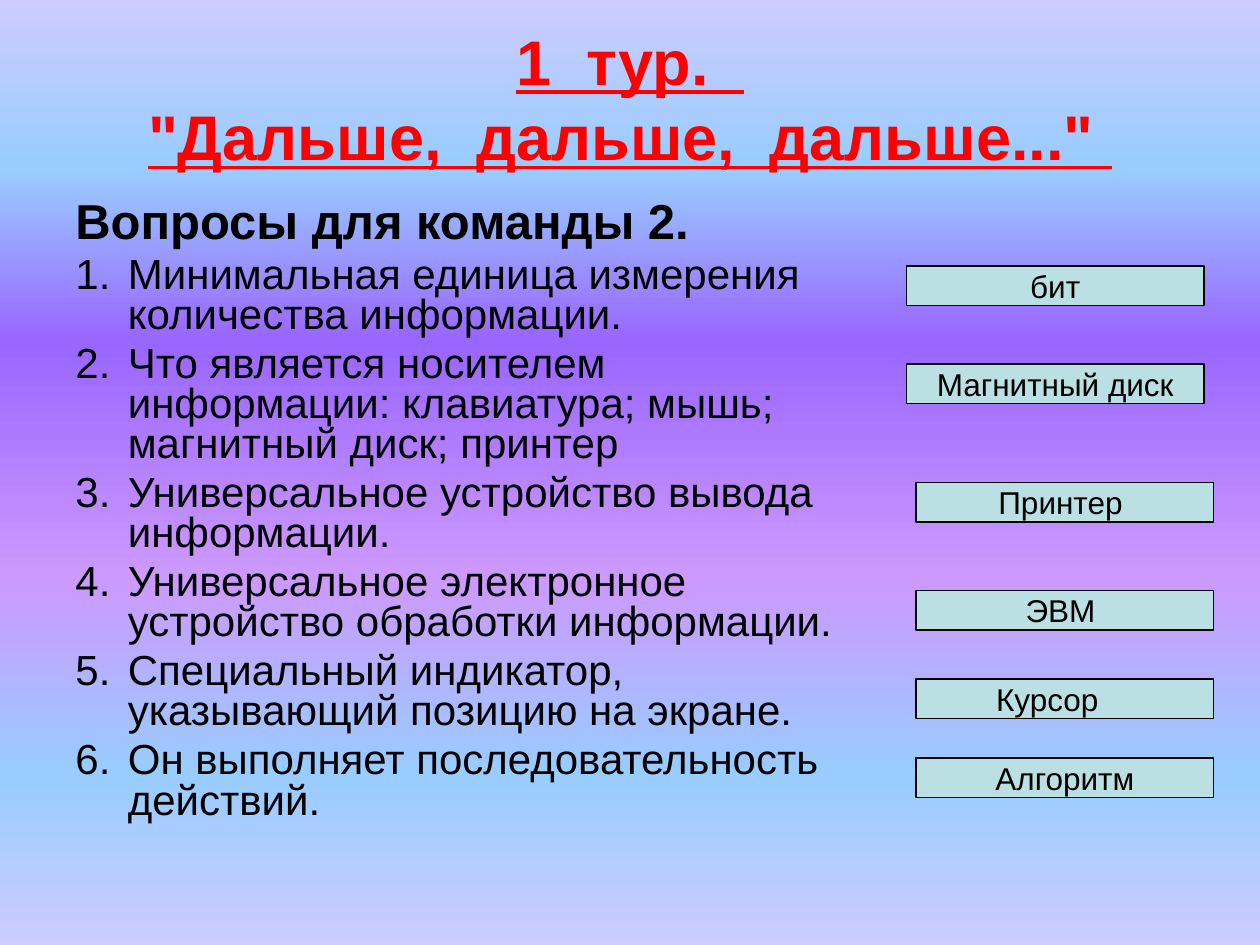
from dataclasses import dataclass

from lxml.etree import SubElement
from pptx import Presentation
from pptx.dml.color import RGBColor
from pptx.enum.shapes import MSO_SHAPE as Preset
from pptx.enum.text import MSO_ANCHOR as Anchor, PP_ALIGN as Align
from pptx.oxml.ns import qn
from pptx.util import Pt

FONT = "Arial"
BLACK = "000000"
RED = "FF0000"
PALE_TEAL = "BBE0E3"
SKY = [(0, "CCCCFF"), (18, "99CCFF"), (36, "9966FF"),
       (61, "CC99FF"), (82, "99CCFF"), (100, "CCCCFF")]
HANGING = Pt(30)


@dataclass
class Answer:
    text: str
    left: float
    top: float
    extra_right: float = 0


QUESTIONS = [
    "Минимальная единица измерения количества информации.",
    "Что является носителем информации: клавиатура; мышь; магнитный диск; принтер",
    "Универсальное устройство вывода информации.",
    "Универсальное электронное устройство обработки информации.",
    "Специальный индикатор, указывающий позицию на экране.",
    "Он выполняет последовательность действий.",
]

ANSWERS = [
    Answer("бит", 518, 152),
    Answer("Магнитный диск", 518, 208),
    Answer("Принтер ", 523.5, 275.75),
    Answer("ЭВМ ", 523.5, 337.5),
    Answer("Курсор", 523.5, 388, 20),
    Answer("Алгоритм", 523.5, 433.25),
]


def color(value: str) -> RGBColor:
    return RGBColor.from_string(value)


def format_runs(paragraph, size: float, value: str, bold=False, underline=False) -> None:
    for run in paragraph.runs:
        run.font.name = FONT
        run.font.size = Pt(size)
        run.font.bold = bold
        run.font.underline = underline
        run.font.color.rgb = color(value)


def paint_background(slide) -> None:
    fill = slide.background.fill
    fill.gradient()
    fill.gradient_angle = 270
    stops = slide.background._cSld.find(".//" + qn("a:gsLst"))
    for stop in list(stops):
        stops.remove(stop)
    for percent, value in SKY:
        stop = SubElement(stops, qn("a:gs"), pos=str(percent * 1000))
        SubElement(stop, qn("a:srgbClr"), val=value)


def add_title(slide) -> None:
    title = slide.shapes.add_textbox(Pt(36), Pt(21.6), Pt(648), Pt(90))
    frame = title.text_frame
    frame.word_wrap = True
    frame.vertical_anchor = Anchor.MIDDLE
    heading = frame.paragraphs[0]
    heading.text = "1\u00a0 тур.\u00a0 \v\"Дальше,\u00a0 дальше,\u00a0 дальше...\"\u00a0\v".replace("\u00a0", " ")
    heading.alignment = Align.CENTER
    format_runs(heading, 36, RED, bold=True, underline=True)


def add_questions(slide) -> None:
    body = slide.shapes.add_textbox(Pt(36), Pt(111.6), Pt(471.6), Pt(419.75))
    frame = body.text_frame
    frame.word_wrap = True
    frame.text = "\n".join(["Вопросы для команды 2.", *QUESTIONS])
    for number, paragraph in enumerate(frame.paragraphs):
        size = 24 if number else 28
        paragraph.line_spacing = 0.8
        paragraph.space_before = Pt(size * 0.2)
        format_runs(paragraph, size, BLACK, bold=number == 0)
        properties = paragraph._p.get_or_add_pPr()
        properties.set("marL", str(HANGING))
        properties.set("indent", str(-HANGING))
        if number:
            SubElement(properties, qn("a:buFont"), typeface=FONT)
            SubElement(properties, qn("a:buAutoNum"), type="arabicPeriod")


def add_answer(slide, answer: Answer) -> None:
    plate = slide.shapes.add_shape(
        Preset.RECTANGLE, Pt(answer.left), Pt(answer.top), Pt(170), Pt(22.5))
    plate.shadow.inherit = False
    plate.fill.solid()
    plate.fill.fore_color.rgb = color(PALE_TEAL)
    plate.line.color.rgb = color(BLACK)
    plate.line.width = Pt(0.75)
    frame = plate.text_frame
    frame.word_wrap = False
    frame.vertical_anchor = Anchor.MIDDLE
    frame.margin_right = Pt(7.2 + answer.extra_right)
    frame.text = answer.text
    label = frame.paragraphs[0]
    label.alignment = Align.CENTER
    format_runs(label, 18, BLACK)


def main() -> None:
    deck = Presentation()
    deck.slide_width, deck.slide_height = Pt(720), Pt(540)
    slide = deck.slides.add_slide(deck.slide_layouts[6])
    paint_background(slide)
    add_title(slide)
    add_questions(slide)
    for answer in ANSWERS:
        add_answer(slide, answer)
    deck.save("out.pptx")


if __name__ == "__main__":
    main()
